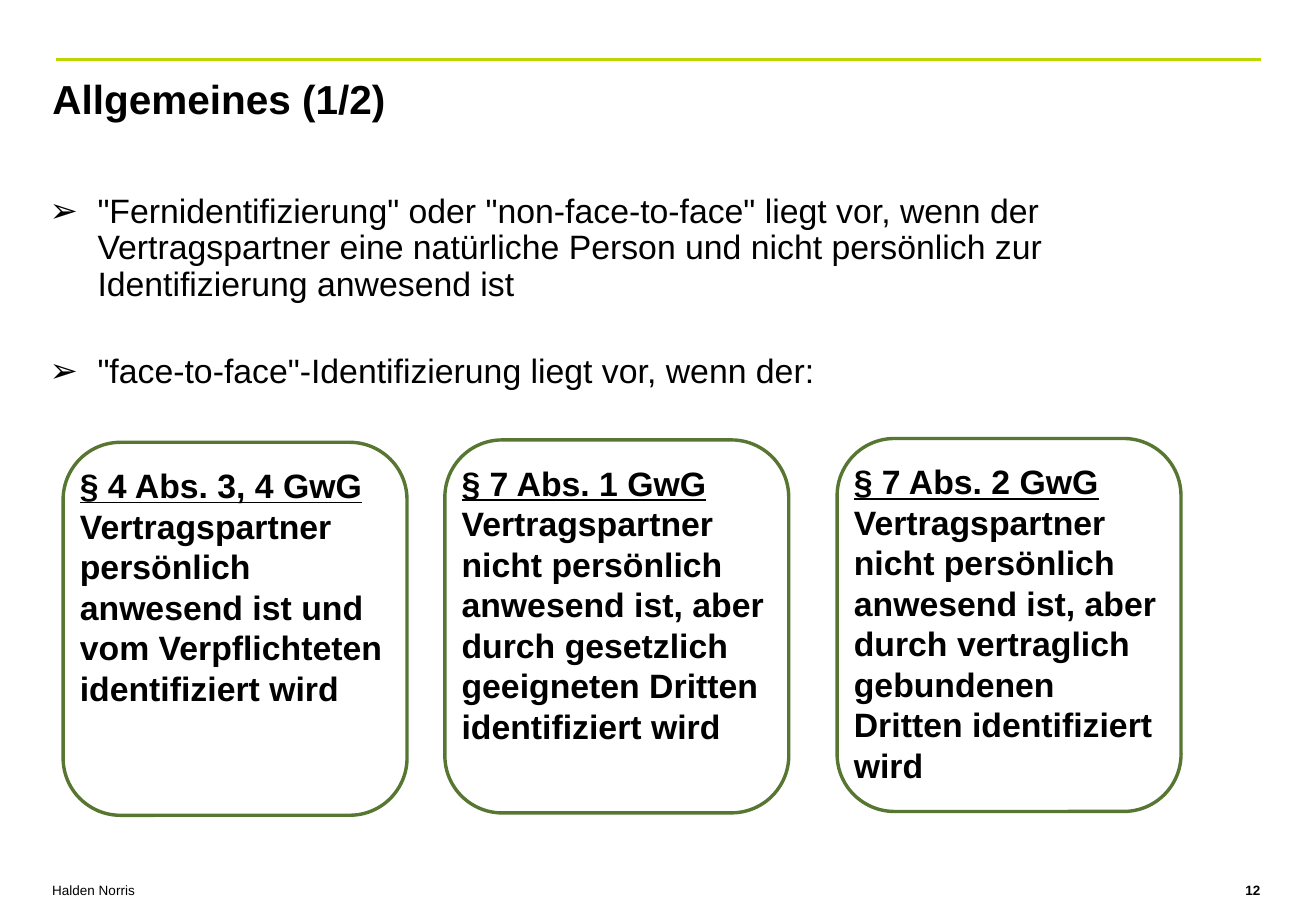
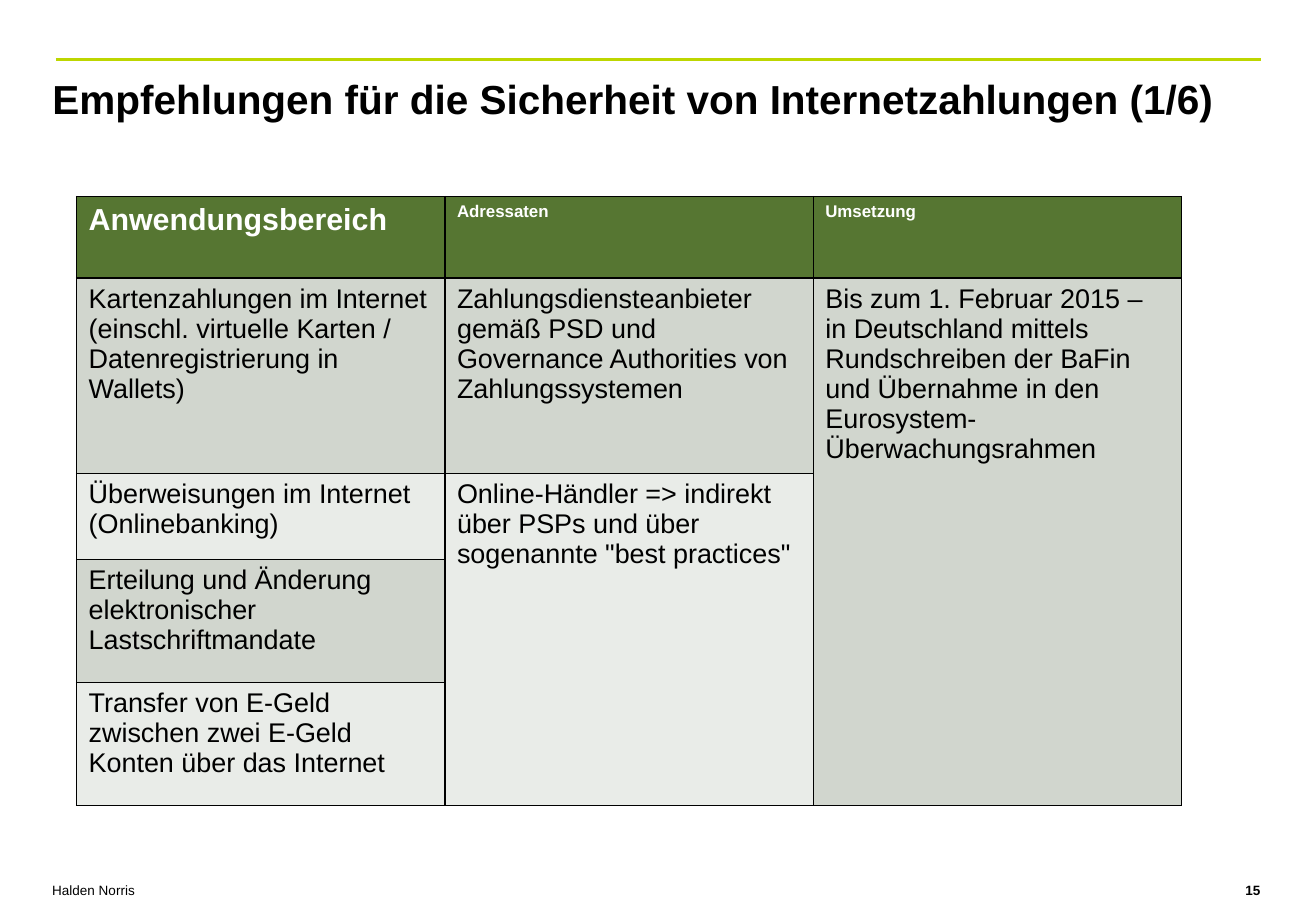
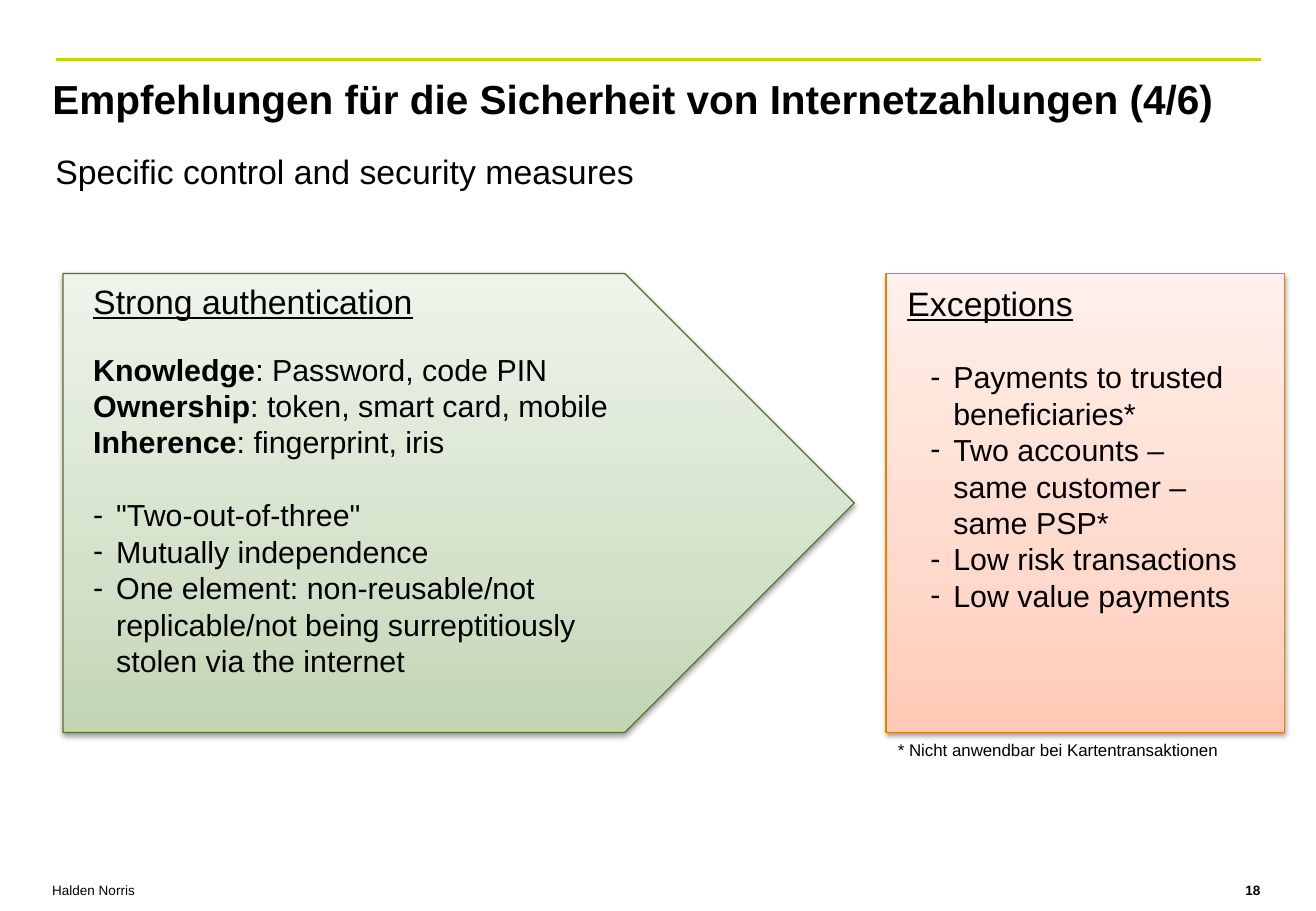
from dataclasses import dataclass
from copy import deepcopy

from pptx import Presentation
from pptx.dml.color import RGBColor
from pptx.enum.shapes import MSO_CONNECTOR as Link, MSO_SHAPE as Form
from pptx.enum.text import MSO_ANCHOR as Anchor, MSO_AUTO_SIZE as Fit, PP_ALIGN as Align
from pptx.oxml import parse_xml
from pptx.oxml.ns import nsdecls, qn
from pptx.util import Cm, Pt


@dataclass(frozen=True)
class Theme:
    font: str = "Arial"
    black: str = "000000"
    white: str = "FFFFFF"
    lime: str = "BDD600"
    green: str = "567632"
    moss: str = "54752F"
    orange: str = "EA7F00"
    dark: str = "D1D6CE"
    light: str = "E9ECE8"
    leaf: tuple = ("C1D5B3", "D3E1CA", "EEF4EB")
    peach: tuple = ("FFCAB5", "FFD9CB", "FFF0EB")
    title: int = 24
    lead: int = 20
    body: int = 18
    cell: int = 16
    small: int = 10
    foot: int = 8


T = Theme()
FIRM = "Halden Norris"


def rgb(code):
    return RGBColor.from_string(code)


# Text
def say(frame, text, size=T.lead, color=T.black, bold=False, under=False,
        lead="", align=Align.LEFT, gap=0, space=None, bullet="", indent=0.48):
    """Add one paragraph; lead is a bold opening run."""
    para = frame.paragraphs[0]
    if para.runs:
        para = frame.add_paragraph()
    para.alignment = align
    para.space_before = Pt(gap)
    if space:
        para.line_spacing = space
    for part, heavy in ((lead, True), (text, bold)):
        if part:
            run = para.add_run()
            run.text = part
            font = run.font
            font.name, font.size = T.font, Pt(size)
            font.bold, font.underline = heavy, under
            font.color.rgb = rgb(color)
    if bullet:
        props = para._p.get_or_add_pPr()
        props.set("marL", str(Cm(indent)))
        props.set("indent", str(-Cm(indent)))
        props.append(parse_xml(f'<a:buFont {nsdecls("a")} typeface="{T.font}"/>'))
        props.append(parse_xml(f'<a:buChar {nsdecls("a")} char="{bullet}"/>'))


def area(slide, left, top, width, height):
    """Add an empty wrapping text box and return its frame."""
    box = slide.shapes.add_textbox(Cm(left), Cm(top), Cm(width), Cm(height))
    box.text_frame.word_wrap = True
    return box.text_frame


# Shapes
def block(slide, form, left, top, width, height, line, weight):
    shape = slide.shapes.add_shape(form, Cm(left), Cm(top), Cm(width), Cm(height))
    shape.shadow.inherit = False
    shape.line.color.rgb = rgb(line)
    shape.line.width = Pt(weight)
    return shape


def card(slide, left, top, head, text):
    shape = block(slide, Form.ROUNDED_RECTANGLE, left, top, 7.19, 7.8, T.green, 2)
    shape.fill.solid()
    shape.fill.fore_color.rgb = rgb(T.white)
    frame = shape.text_frame
    frame.word_wrap = True
    frame.vertical_anchor = Anchor.TOP
    frame.margin_left = frame.margin_right = 0
    say(frame, head, bold=True, under=True)
    say(frame, text, bold=True)


def panel(slide, form, left, width, line, tones):
    """Add a panel with a three-tone gradient and a soft shadow."""
    shape = block(slide, form, left, 5.72, width, 9.6, line, 0.75)
    shape.fill.gradient()
    shape.fill.gradient_angle = 90
    props = shape._element.spPr
    stops = props.find(qn("a:gradFill")).find(qn("a:gsLst"))
    stops.append(deepcopy(stops[-1]))
    for stop, tone, place in zip(shape.fill.gradient_stops, tones, (0, 0.35, 1)):
        stop.color.rgb = rgb(tone)
        stop.position = place
    props.find(qn("a:effectLst")).append(parse_xml(
        f'<a:outerShdw {nsdecls("a")} blurRad="{Pt(3.1)}" dist="{Pt(1.6)}" '
        f'dir="5400000" rotWithShape="0"><a:srgbClr val="{T.black}">'
        '<a:alpha val="38000"/></a:srgbClr></a:outerShdw>'))


# Table
def paint(cell, fill):
    """Fill a cell and give it thin black borders."""
    cell.fill.solid()
    cell.fill.fore_color.rgb = rgb(fill)
    props = cell._tc.get_or_add_tcPr()
    for spot, side in enumerate(("lnL", "lnR", "lnT", "lnB")):
        props.insert(spot, parse_xml(
            f'<a:{side} {nsdecls("a")} w="{Pt(1)}"><a:solidFill>'
            f'<a:srgbClr val="{T.black}"/></a:solidFill></a:{side}>'))


def grid(slide, rows, highs, wide, spans):
    cols = len(rows[0])
    table = slide.shapes.add_table(len(rows), cols, Cm(1.6), Cm(4.11),
                                   Cm(wide * cols), Cm(sum(highs))).table
    table.horz_banding = False
    for col in table.columns:
        col.width = Cm(wide)
    for r, (row, high) in enumerate(zip(rows, highs)):
        table.rows[r].height = Cm(high)
        for c, text in enumerate(row):
            cell = table.cell(r, c)
            paint(cell, T.green if r == 0 else T.dark if r % 2 else T.light)
            if r == 0:
                say(cell.text_frame, text, size=T.small if c else T.body,
                    color=T.white, bold=True)
            elif text:
                say(cell.text_frame, text, size=T.cell)
    for r, c in spans:
        table.cell(r, c).merge(table.cell(len(rows) - 1, c))


# Shared frame: rule, title, footer
def page(deck, title, number):
    slide = deck.slides.add_slide(deck.slide_layouts[5])
    rule = slide.shapes.add_connector(Link.STRAIGHT, Cm(1.17), Cm(1.24), Cm(26.37), Cm(1.24))
    rule.line.color.rgb = rgb(T.lime)
    rule.line.width = Pt(2)
    rule._element.spPr.append(parse_xml(f'<a:effectLst {nsdecls("a")}/>'))
    head = slide.shapes.title
    head.left, head.top, head.width, head.height = Cm(0.84), Cm(1.42), Cm(26.19), Cm(2.92)
    frame = head.text_frame
    frame.word_wrap, frame.auto_size = True, Fit.NONE
    frame.vertical_anchor = Anchor.TOP
    say(frame, title, size=T.title, bold=True)
    say(area(slide, 0.84, 18.31, 6.43, 0.73), FIRM, size=T.foot)
    say(area(slide, 20.17, 18.31, 6.43, 0.73), str(number), size=T.foot,
        bold=True, align=Align.RIGHT)
    return slide


# Slides
def basics(deck):
    slide = page(deck, "Allgemeines (1/2)", 12)
    frame = area(slide, 0.79, 3.94, 24.43, 5)
    style = dict(bullet="➢", indent=1, space=0.9)
    say(frame, '"Fernidentifizierung" oder "non-face-to-face" liegt vor, wenn der '
        "Vertragspartner eine natürliche Person und nicht persönlich zur "
        "Identifizierung anwesend ist", **style)
    say(frame, '"face-to-face"-Identifizierung liegt vor, wenn der:', gap=30, **style)
    absent = "Vertragspartner nicht persönlich anwesend ist, aber durch "
    for left, top, head, text in (
        (1.32, 9.25, "§ 4 Abs. 3, 4 GwG",
         "Vertragspartner persönlich anwesend ist und vom Verpflichteten identifiziert wird"),
        (9.3, 9.2, "§ 7 Abs. 1 GwG",
         absent + "gesetzlich geeigneten Dritten identifiziert wird"),
        (17.5, 9.17, "§ 7 Abs. 2 GwG",
         absent + "vertraglich gebundenen Dritten identifiziert wird"),
    ):
        card(slide, left, top, head, text)


def scope(deck):
    slide = page(deck, "Empfehlungen für die Sicherheit von Internetzahlungen (1/6)", 15)
    rows = (
        ("Anwendungsbereich", "Adressaten", "Umsetzung"),
        ("Kartenzahlungen im Internet (einschl. virtuelle Karten / "
         "Datenregistrierung in Wallets)",
         "Zahlungsdiensteanbieter gemäß PSD und Governance Authorities von Zahlungssystemen",
         "Bis zum 1. Februar 2015 – in Deutschland mittels Rundschreiben der BaFin "
         "und Übernahme in den Eurosystem-Überwachungsrahmen"),
        ("Überweisungen im Internet (Onlinebanking)",
         'Online-Händler => indirekt über PSPs und über sogenannte "best practices"', ""),
        ("Erteilung und Änderung elektronischer Lastschriftmandate", "", ""),
        ("Transfer von E-Geld zwischen zwei E-Geld Konten über das Internet", "", ""),
    )
    grid(slide, rows, (1.7, 4.09, 1.8, 2.57, 2.57), 7.7, ((1, 2), (2, 1)))


def control(deck):
    slide = page(deck, "Empfehlungen für die Sicherheit von Internetzahlungen (4/6)", 18)
    say(area(slide, 0.91, 3.02, 13.79, 1.12), "Specific control and security measures")

    # Strong authentication
    panel(slide, Form.PENTAGON, 1.32, 16.54, T.moss, T.leaf)
    say(area(slide, 1.7, 5.74, 7.39, 1.12), "Strong authentication", under=True)
    frame = area(slide, 1.7, 7.21, 12.19, 7.19)
    for lead, text in (("Knowledge", "Password, code PIN"),
                       ("Ownership", "token, smart card, mobile"),
                       ("Inherence", "fingerprint, iris")):
        say(frame, ": " + text, size=T.body, lead=lead)
    for spot, text in enumerate((
            '"Two-out-of-three"', "Mutually independence",
            "One element: non-reusable/not replicable/not being surreptitiously "
            "stolen via the internet")):
        say(frame, text, size=T.body, bullet="-", gap=0 if spot else 21.6)

    # Exceptions
    panel(slide, Form.RECTANGLE, 18.52, 8.33, T.orange, T.peach)
    say(area(slide, 18.72, 5.79, 7.39, 1.12), "Exceptions", under=True)
    frame = area(slide, 19.2, 7.37, 6.93, 5.64)
    for text in ("Payments to trusted beneficiaries*",
                 "Two accounts – same customer – same PSP*",
                 "Low risk transactions", "Low value payments"):
        say(frame, text, size=T.body, bullet="-")
    say(area(slide, 18.52, 15.34, 8.33, 0.69),
        "* Nicht anwendbar bei Kartentransaktionen", size=T.small)


def main():
    deck = Presentation()
    deck.slide_width, deck.slide_height = Cm(27.51), Cm(19.05)
    basics(deck)
    scope(deck)
    control(deck)
    deck.save("out.pptx")


if __name__ == "__main__":
    main()
